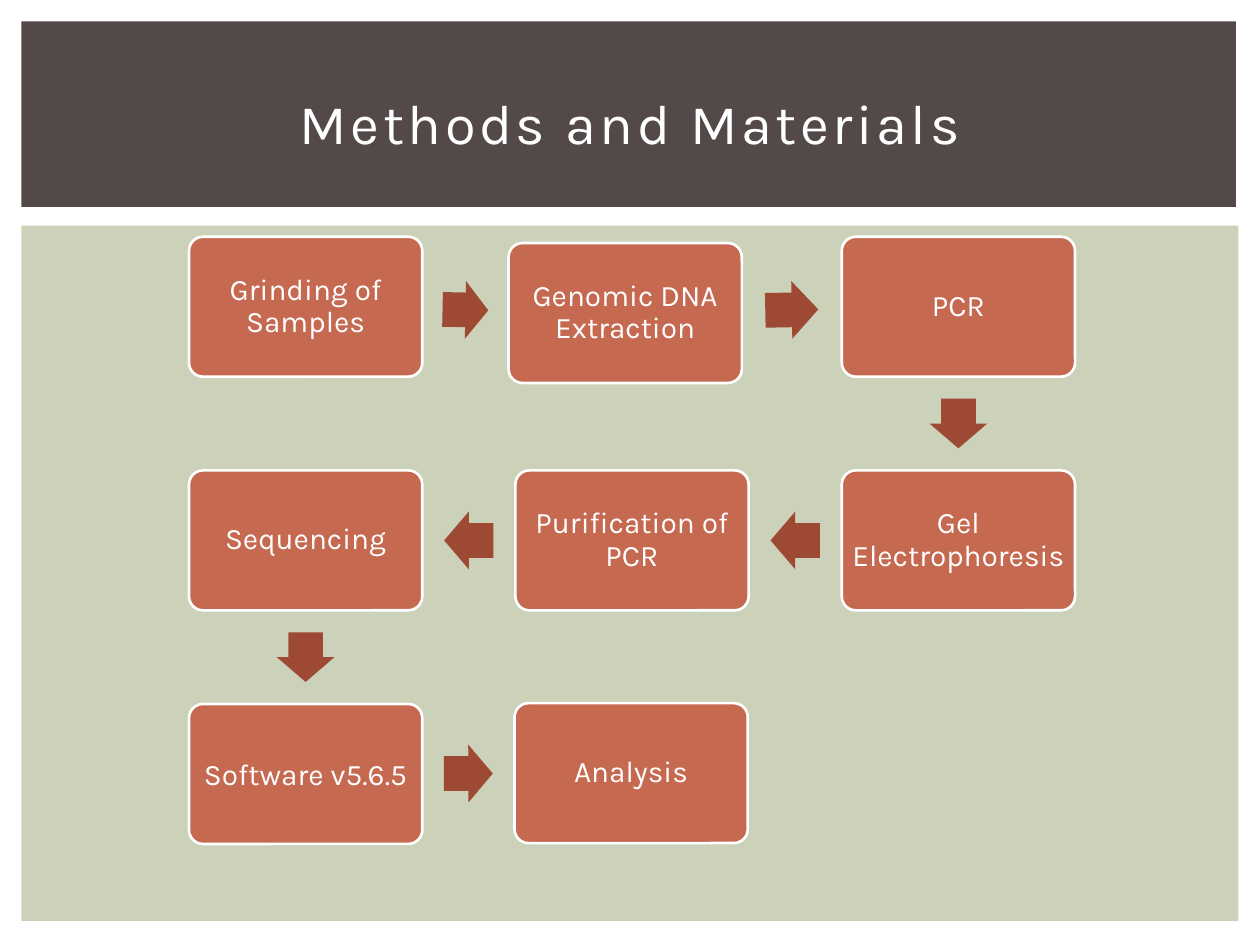
import math
from itertools import pairwise

from pptx import Presentation
from pptx.dml.color import RGBColor
from pptx.enum import shapes, text
from pptx.util import Pt

WHITE = RGBColor(0xFF, 0xFF, 0xFF)
BROWN = RGBColor(0x53, 0x49, 0x49)
SAGE = RGBColor(0xCC, 0xD1, 0xB9)
RUST = RGBColor(0xC6, 0x69, 0x51)
DARK_RUST = RGBColor(0x9E, 0x49, 0x34)
FONT = "Karla"

BOX_W, BOX_H = 133.3, 80
COL_STEP, ROW_STEP = 186.5, 133.5
ARROW_H = 33

# Label, column, row, offset from the grid (x, y), line spacing
STEPS = [
    ("Grinding of Samples", 0, 0, 0, 0, 0.9),
    ("Genomic DNA Extraction", 1, 0, -3.9, 3.6, 0.9),
    ("PCR", 2, 0, 0, 0, 0.9),
    ("Gel Electrophoresis", 2, 1, 0, 0, 0.9),
    ("Purification of PCR", 1, 1, 0, 0, 0.9),
    ("Sequencing", 0, 1, 0, 0, 0.9),
    ("Software v5.6.5", 0, 2, 0, 0, 1.0),
    ("Analysis", 1, 2, -0.5, -0.5, 0.9),
]


def add_filled(s, kind, x, y, w, h, color):
    sp = s.shapes.add_shape(kind, Pt(x), Pt(y), Pt(w), Pt(h))
    sp.shadow.inherit = False
    sp.fill.solid()
    sp.fill.fore_color.rgb = color
    sp.line.fill.background()
    return sp


def set_text(sp, words, size, inset_x, inset_y):
    tf = sp.text_frame
    tf.word_wrap = True
    tf.vertical_anchor = text.MSO_ANCHOR.MIDDLE
    tf.margin_left = tf.margin_right = Pt(inset_x)
    tf.margin_top = tf.margin_bottom = Pt(inset_y)
    tf.text = words
    p = tf.paragraphs[0]
    p.alignment = text.PP_ALIGN.CENTER
    r = p.runs[0]
    r.font.name = FONT
    r.font.size = Pt(size)
    r.font.color.rgb = WHITE
    return p


def add_header(s, x, y, w, h):
    add_filled(s, shapes.MSO_SHAPE.RECTANGLE, x, y, w, h, BROWN)
    sp = s.shapes.add_textbox(Pt(x + 18), Pt(y + 16), Pt(w - 34), Pt(83))
    p = set_text(sp, "Methods and Materials", 32, 7.2, 3.6)
    p.runs[0].font._element.set("spc", "200")  # letter spacing of 2 pt


def add_step(s, x, y, label, spacing):
    sp = add_filled(s, shapes.MSO_SHAPE.ROUNDED_RECTANGLE, x, y, BOX_W, BOX_H, RUST)
    sp.adjustments[0] = 0.1
    sp.line.color.rgb = WHITE
    sp.line.width = Pt(1.5)
    set_text(sp, label, 17, 2.7, 2.7).line_spacing = spacing


def add_arrow(s, start, end):
    """Place a block arrow in the gap between two boxes, given their corners."""
    dx, dy = end[0] - start[0], end[1] - start[1]
    gap = max(abs(dx) - BOX_W, abs(dy) - BOX_H)
    w = 0.53 * gap
    cx = (start[0] + end[0] + BOX_W) / 2
    cy = (start[1] + end[1] + BOX_H) / 2
    sp = add_filled(s, shapes.MSO_SHAPE.RIGHT_ARROW,
                    cx - w / 2, cy - ARROW_H / 2, w, ARROW_H, DARK_RUST)
    sp.adjustments[0] = 0.6
    sp.adjustments[1] = 0.5
    sp.rotation = math.degrees(math.atan2(dy, dx)) % 360


def add_workflow(s, x, y, w, h):
    add_filled(s, shapes.MSO_SHAPE.RECTANGLE, x, y, w, h, SAGE)
    left, top = x + 95.8, y + 6.4
    corners = []
    for label, col, row, dx, dy, spacing in STEPS:
        corner = (left + col * COL_STEP + dx, top + row * ROW_STEP + dy)
        add_step(s, *corner, label, spacing)
        corners.append(corner)
    for start, end in pairwise(corners):
        add_arrow(s, start, end)


def main():
    prs = Presentation()
    prs.slide_width, prs.slide_height = Pt(720), Pt(540)
    s = prs.slides.add_slide(prs.slide_layouts[6])
    s.background.fill.solid()
    s.background.fill.fore_color.rgb = WHITE
    add_workflow(s, 12.2, 128.9, 695.5, 397.4)
    add_header(s, 12.2, 12.2, 694, 106)
    prs.save("out.pptx")


if __name__ == "__main__":
    main()
